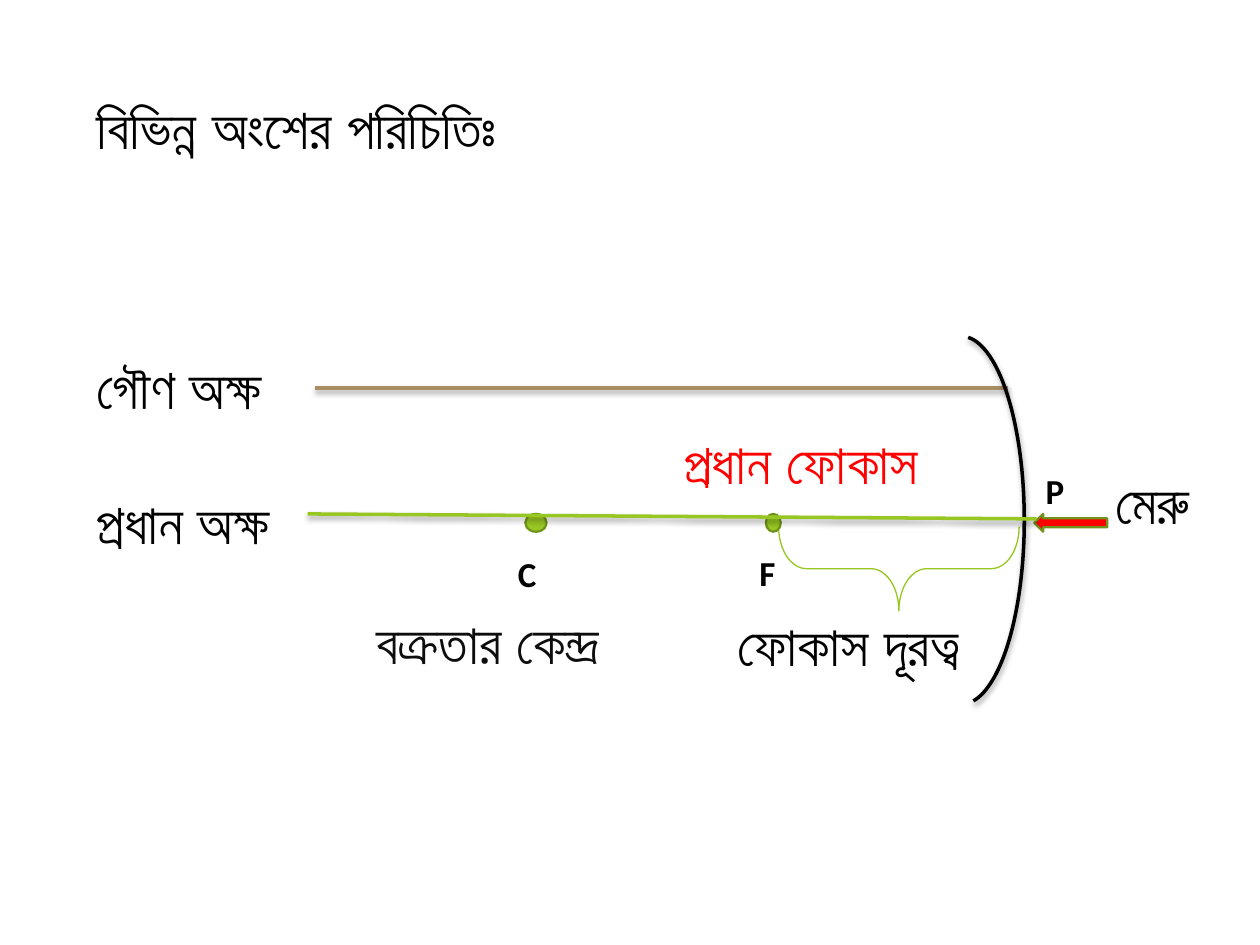
from dataclasses import dataclass

from lxml.etree import SubElement
from pptx import Presentation
from pptx.dml.color import RGBColor
from pptx.enum.shapes import MSO_CONNECTOR, MSO_SHAPE
from pptx.enum.text import MSO_ANCHOR, MSO_AUTO_SIZE, PP_ALIGN
from pptx.oxml.ns import qn
from pptx.util import Cm, Pt


@dataclass(frozen=True)
class Theme:
    font: str = "Calibri"
    black: str = "000000"
    soft_black: str = "0D0D0D"
    red: str = "FF0000"
    green: str = "98C723"
    dark_green: str = "70931A"
    brace_green: str = "96C71E"
    brown: str = "A98D63"
    term_size: float = 32
    letter_size: float = 20
    thick: float = 2
    edge: float = 1.25
    thin: float = 0.75


class MirrorSlide:
    def __init__(self, presentation, theme):
        self.theme = theme
        self.slide = presentation.slides.add_slide(presentation.slide_layouts[5])
        self.shapes = self.slide.shapes

    def _write(self, frame, text, size, color, bold):
        frame.text = text
        frame.word_wrap = True
        paragraph = frame.paragraphs[0]
        paragraph.alignment = PP_ALIGN.LEFT
        font = paragraph.runs[0].font
        font.name = self.theme.font
        font.size = Pt(size)
        font.bold = bold
        font.color.rgb = RGBColor.from_string(color)
        return font

    def _stroke(self, line, color, width):
        line.color.rgb = RGBColor.from_string(color)
        line.width = Pt(width)

    def _drop_shadow(self, part):
        effects = SubElement(part._element.spPr, qn("a:effectLst"))
        shadow = SubElement(effects, qn("a:outerShdw"), blurRad=str(Pt(3.1)),
                            dist=str(Pt(1.8)), dir="5400000", rotWithShape="0")
        color = SubElement(shadow, qn("a:srgbClr"), val=self.theme.black)
        SubElement(color, qn("a:alpha"), val="35000")

    def title(self, text, left, top, width, height):
        heading = self.shapes.title
        heading.left, heading.top = Cm(left), Cm(top)
        heading.width, heading.height = Cm(width), Cm(height)
        self._write(heading.text_frame, text, self.theme.term_size, self.theme.black, True)
        heading.text_frame.auto_size = MSO_AUTO_SIZE.NONE
        heading.text_frame.vertical_anchor = MSO_ANCHOR.TOP

    def _label(self, text, left, top, width, height, size, color, bold):
        label = self.shapes.add_textbox(Cm(left), Cm(top), Cm(width), Cm(height))
        font = self._write(label.text_frame, text, size, color, bold)
        label.text_frame.auto_size = MSO_AUTO_SIZE.SHAPE_TO_FIT_TEXT
        return font

    def term(self, text, left, top, width, color=None, bold=True):
        self._label(text, left, top, width, 1.63, self.theme.term_size,
                    color or self.theme.black, bold)

    def letter(self, text, left, top, width, outline=None):
        font = self._label(text, left, top, width, 1.12, self.theme.letter_size,
                           self.theme.black, True)
        if outline:
            border = SubElement(font._element, qn("a:ln"), w=str(Pt(self.theme.thin)))
            fill = SubElement(border, qn("a:solidFill"))
            SubElement(fill, qn("a:srgbClr"), val=outline)
            font._element.insert(0, border)

    def axis(self, start, end, color):
        ray = self.shapes.add_connector(MSO_CONNECTOR.STRAIGHT, *map(Cm, start + end))
        self._stroke(ray.line, color, self.theme.thick)
        self._drop_shadow(ray)

    def solid(self, kind, left, top, width, height, fill):
        mark = self.shapes.add_shape(kind, Cm(left), Cm(top), Cm(width), Cm(height))
        mark.fill.solid()
        mark.fill.fore_color.rgb = RGBColor.from_string(fill)
        self._stroke(mark.line, self.theme.dark_green, self.theme.edge)
        mark.shadow.inherit = False

    def curve(self, kind, box, adjustments, color, width, rotation=0, shadow=False):
        outline = self.shapes.add_shape(kind, *map(Cm, box))
        for index, value in enumerate(adjustments):
            outline.adjustments[index] = value
        outline.rotation = rotation
        outline.fill.background()
        self._stroke(outline.line, color, width)
        if shadow:
            self._drop_shadow(outline)
        else:
            outline.shadow.inherit = False


def main():
    presentation = Presentation()
    presentation.slide_width, presentation.slide_height = Cm(25.4), Cm(19.05)
    theme = Theme()
    mirror = MirrorSlide(presentation, theme)
    left_margin, axis_top = 1.7, 10.36

    mirror.title("বিভিন্ন অংশের পরিচিতিঃ", left_margin, 1.75, 10.36, 1.63)
    mirror.term("বক্রতার কেন্দ্র", 7.34, 12.14, 5.72, theme.soft_black)
    mirror.term("প্রধান ফোকাস", 13.54, 8.51, 5.51, theme.red)
    mirror.term("প্রধান অক্ষ", left_margin, 9.73, 4.88, bold=False)
    mirror.curve(MSO_SHAPE.RIGHT_BRACE, (17.27, 9.04, 1.7, 4.85), (0.33, 0.5),
                 theme.brace_green, theme.thin, rotation=90)
    mirror.term("ফোকাস দূরত্ব", 14.61, 12.19, 5.28)
    mirror.term("মেরু", 22.23, 9.32, 3.18)
    mirror.axis((6.35, 7.82), (20.32, 7.82), theme.brown)
    mirror.solid(MSO_SHAPE.LEFT_ARROW, 20.85, axis_top, 1.47, 0.36, theme.red)
    mirror.term("গৌণ অক্ষ", left_margin, 7.01, 4.01, bold=False)
    mirror.curve(MSO_SHAPE.ARC, (18.11, 6.78, 2.54, 7.42), (163.3, 51.69),
                 theme.black, theme.thick, shadow=True)
    for left, width in ((10.59, 0.43), (15.44, 0.3)):
        mirror.solid(MSO_SHAPE.OVAL, left, axis_top, width, 0.36, theme.green)
    mirror.letter("P", 20.83, 9.35, 0.99, theme.red)
    mirror.letter("C", 10.19, 11.02, 1.07, theme.soft_black)
    mirror.letter("F", 15.06, 11, 1.04)
    mirror.axis((6.2, axis_top), (20.9, 10.46), theme.green)

    presentation.save("out.pptx")


if __name__ == "__main__":
    main()
